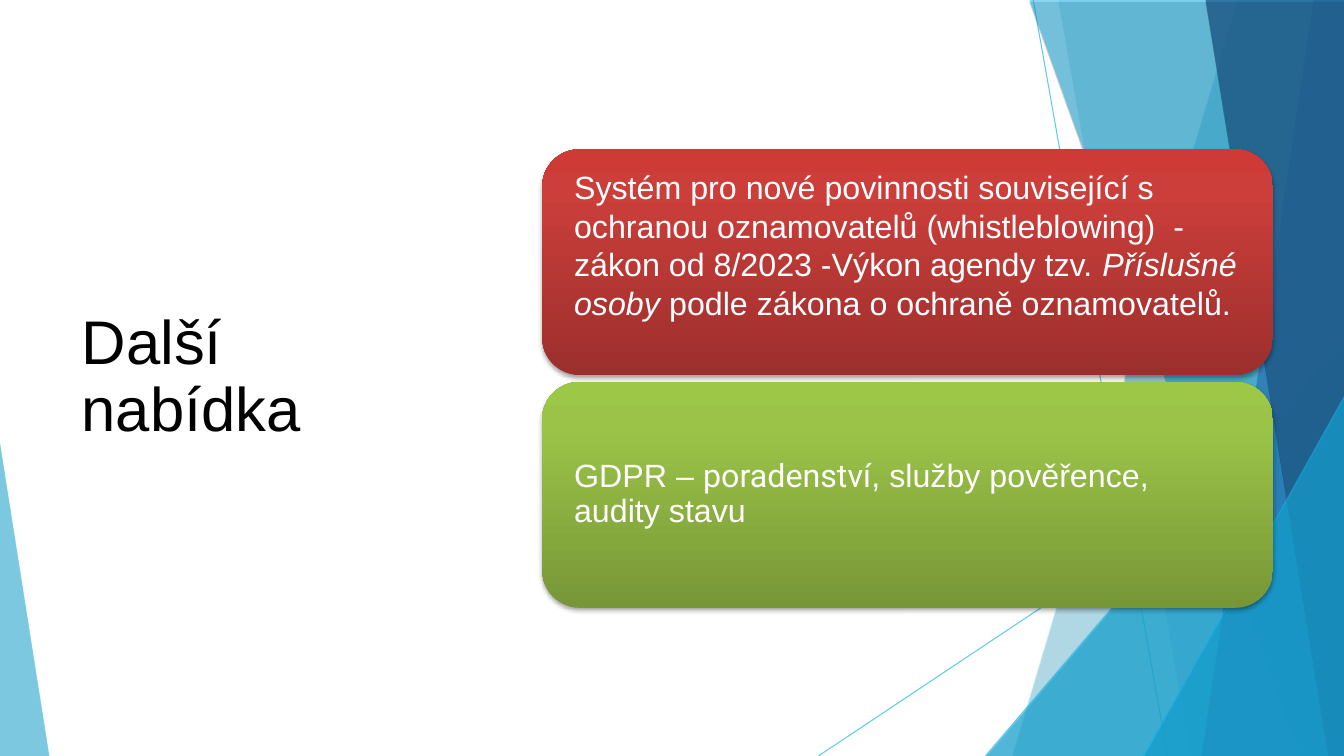
from dataclasses import dataclass

from pptx import Presentation
from pptx.dml.color import RGBColor
from pptx.enum.shapes import MSO_CONNECTOR, MSO_SHAPE
from pptx.enum.text import MSO_ANCHOR, PP_ALIGN
from pptx.oxml.ns import qn
from pptx.util import Pt
from lxml.etree import SubElement

WIDE, HIGH = 960, 540


@dataclass(frozen=True)
class Theme:
    sky: str = "5FCBEF"
    cyan: str = "17B0E4"
    blue: str = "2E83C3"
    navy: str = "226292"
    white: str = "FFFFFF"
    black: str = "000000"
    red: tuple = ((0, "9C2F2D"), (80, "CB3E3A"), (100, "CE3B37"))
    green: tuple = ((0, "779737"), (80, "9BC348"), (100, "9DC746"))
    font: str = "Arial"
    accent: str = "Roboto"
    title: int = 44
    body: int = 23


THEME = Theme()


@dataclass(frozen=True)
class Band:
    """A band to the right edge, from x = top above to x = base below."""
    top: float
    base: float
    color: str
    alpha: int


@dataclass(frozen=True)
class Wedge:
    """A right triangle standing on the bottom edge; tip is 0 left, 1 right."""
    left: float
    top: float
    width: float
    tip: int
    color: str
    alpha: int


@dataclass(frozen=True)
class Phrase:
    text: str
    font: str = THEME.font
    italic: bool = False


@dataclass(frozen=True)
class Card:
    stops: tuple
    words: tuple
    leading: float
    foot: float


LINES = ((738, 0, 834, HIGH), (WIDE, 290, 584.6, HIGH))
DECOR = (
    Band(884.2, 722.9, THEME.sky, 36),
    Band(756, 851, THEME.sky, 20),
    Wedge(703.4, 239.8, 256.6, 1, THEME.cyan, 66),
    Band(735.1, 929.5, THEME.cyan, 50),
    Band(938.2, 858.2, THEME.blue, 70),
    Band(861.1, 949, THEME.navy, 80),
    Wedge(816.5, 283, 143.5, 1, THEME.cyan, 66),
    Wedge(0, 316, 35.3, 0, THEME.sky, 70),
)
CARDS = (
    Card(THEME.red, (
        Phrase("Systém pro nové povinnosti související s ochranou oznamovatelů "
               "(whistleblowing)  - zákon od 8/2023 -Výkon agendy tzv. "),
        Phrase("Příslušné osoby ", italic=True),
        Phrase("podle zákona o ochraně oznamovatelů."),
    ), 1, 40),
    Card(THEME.green, (
        Phrase("GDPR – "),
        Phrase("poradenství", THEME.accent),
        Phrase(", služby pověřence, audity stavu"),
    ), 0.9, 15),
)


def rgb(code: str) -> RGBColor:
    return RGBColor.from_string(code)


def shade(shape, blur: float, drop: float) -> None:
    """Give the shape a soft black shadow straight below."""
    shape.shadow.inherit = False
    effects = shape._element.spPr.find(qn("a:effectLst"))
    outer = SubElement(effects, qn("a:outerShdw"), blurRad=str(Pt(blur)),
                       dist=str(Pt(drop)), dir="5400000", rotWithShape="0")
    color = SubElement(outer, qn("a:srgbClr"), val=THEME.black)
    SubElement(color, qn("a:alpha"), val="35000")


def tint(shape, color: str, alpha: int) -> None:
    shape.fill.solid()
    shape.fill.fore_color.rgb = rgb(color)
    node = shape._element.spPr.find(qn("a:solidFill"))[0]
    SubElement(node, qn("a:alpha"), val=str(alpha * 1000))
    shape.line.fill.background()
    shade(shape, 0, 2)


def blend(shape, stops: tuple) -> None:
    """Fill with a gradient that runs from bottom to top."""
    shape.fill.gradient()
    shape.fill.gradient_angle = 90
    nodes = shape._element.spPr.find(qn("a:gradFill")).find(qn("a:gsLst"))
    for node in list(nodes):
        nodes.remove(node)
    for place, color in stops:
        stop = SubElement(nodes, qn("a:gs"), pos=str(place * 1000))
        SubElement(stop, qn("a:srgbClr"), val=color)


def draw_line(slide, ends: tuple) -> None:
    line = slide.shapes.add_connector(MSO_CONNECTOR.STRAIGHT, *map(Pt, ends))
    line.line.color.rgb = rgb(THEME.sky)
    line.line.width = Pt(0.75)
    SubElement(line._element.spPr, qn("a:effectLst"))


def draw_band(slide, band: Band) -> None:
    pen = slide.shapes.build_freeform(Pt(band.top), Pt(-0.7), scale=1.0)
    pen.add_line_segments([(Pt(WIDE), Pt(-0.7)), (Pt(WIDE), Pt(HIGH)),
                           (Pt(band.base), Pt(HIGH))], close=True)
    tint(pen.convert_to_shape(), band.color, band.alpha)


def draw_wedge(slide, wedge: Wedge) -> None:
    shape = slide.shapes.add_shape(
        MSO_SHAPE.ISOSCELES_TRIANGLE, Pt(wedge.left), Pt(wedge.top),
        Pt(wedge.width), Pt(HIGH - wedge.top))
    shape.adjustments[0] = wedge.tip
    tint(shape, wedge.color, wedge.alpha)


def draw_card(slide, card: Card, top: float) -> None:
    shape = slide.shapes.add_shape(MSO_SHAPE.ROUNDED_RECTANGLE, Pt(387.2),
                                   Pt(top), Pt(522), Pt(161.4))
    blend(shape, card.stops)
    shape.line.fill.background()
    shade(shape, 3.1, 1.8)
    frame = shape.text_frame
    frame.word_wrap = True
    frame.vertical_anchor = MSO_ANCHOR.MIDDLE
    frame.margin_left = frame.margin_right = frame.margin_top = Pt(15)
    frame.margin_bottom = Pt(card.foot)
    para = frame.paragraphs[0]
    para.alignment = PP_ALIGN.LEFT
    para.line_spacing = card.leading
    for phrase in card.words:
        run = para.add_run()
        run.text = phrase.text
        run.font.name = phrase.font
        run.font.size = Pt(THEME.body)
        run.font.italic = phrase.italic
        run.font.color.rgb = rgb(THEME.white)


def draw_title(slide, text: str) -> None:
    title = slide.shapes.title
    title.left, title.top = Pt(51.1), Pt(108.7)
    title.width, title.height = Pt(279.4), Pt(322.6)
    frame = title.text_frame
    frame.text = text
    frame.word_wrap = True
    frame.vertical_anchor = MSO_ANCHOR.MIDDLE
    para = frame.paragraphs[0]
    para.alignment = PP_ALIGN.LEFT
    para.line_spacing = 0.9
    font = para.runs[0].font
    font.name, font.size = THEME.font, Pt(THEME.title)
    font.color.rgb = rgb(THEME.black)


def main() -> None:
    deck = Presentation()
    deck.slide_width, deck.slide_height = Pt(WIDE), Pt(HIGH)
    slide = deck.slides.add_slide(deck.slide_layouts[5])
    for ends in LINES:
        draw_line(slide, ends)
    for item in DECOR:
        if isinstance(item, Band):
            draw_band(slide, item)
        else:
            draw_wedge(slide, item)
    draw_title(slide, "Další nabídka")
    for row, card in enumerate(CARDS):
        draw_card(slide, card, 106.6 + row * 166.2)
    deck.save("out.pptx")


if __name__ == "__main__":
    main()
